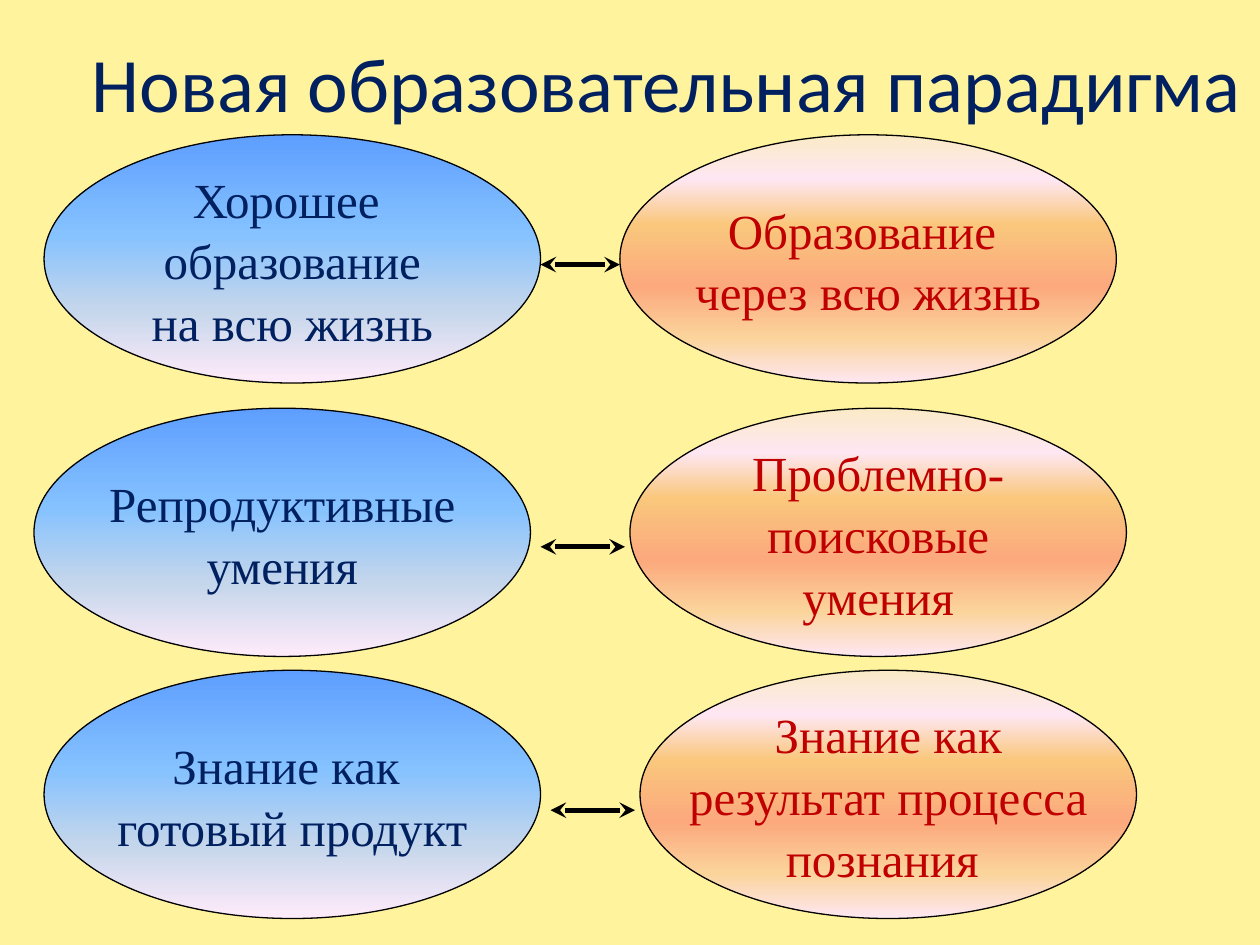
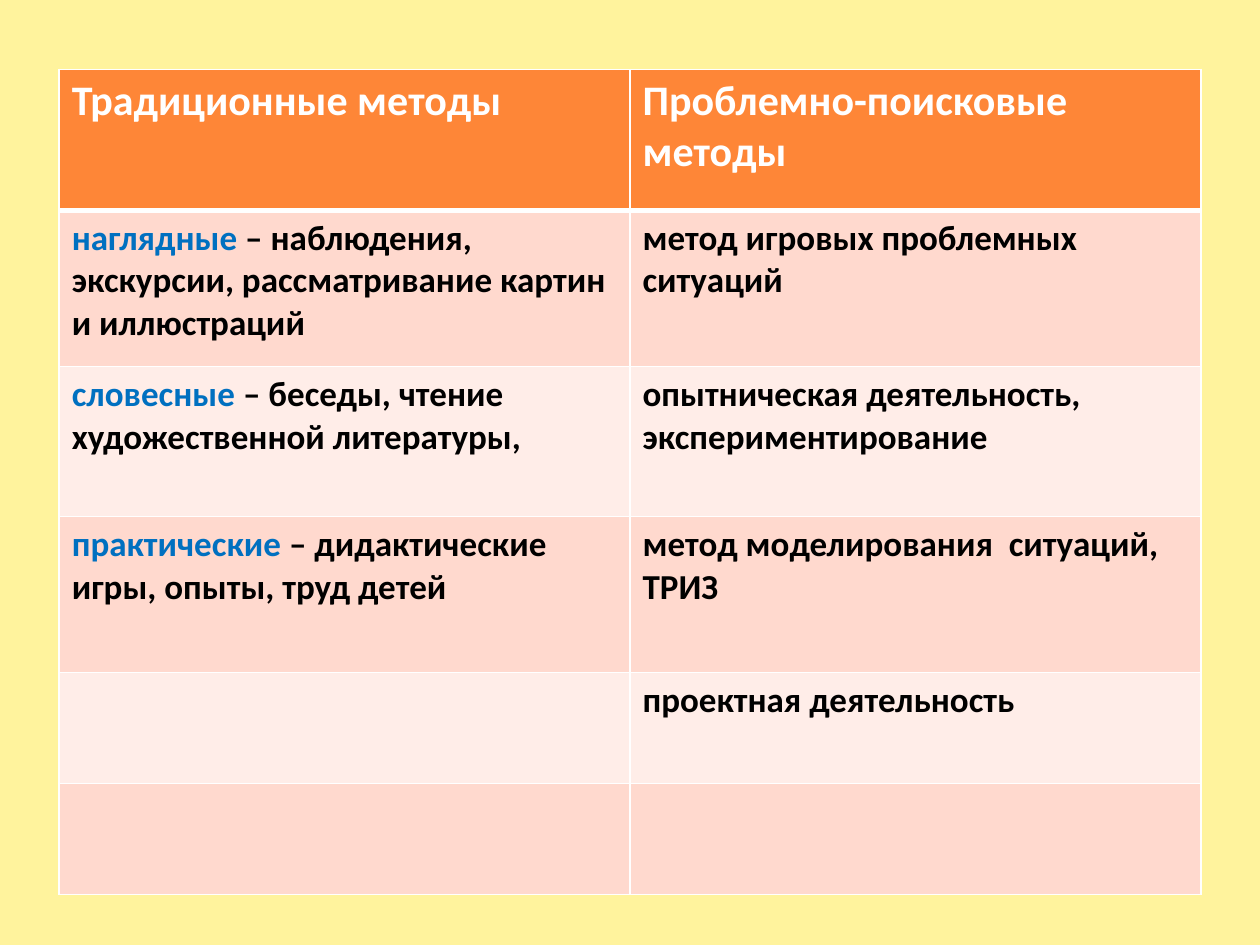
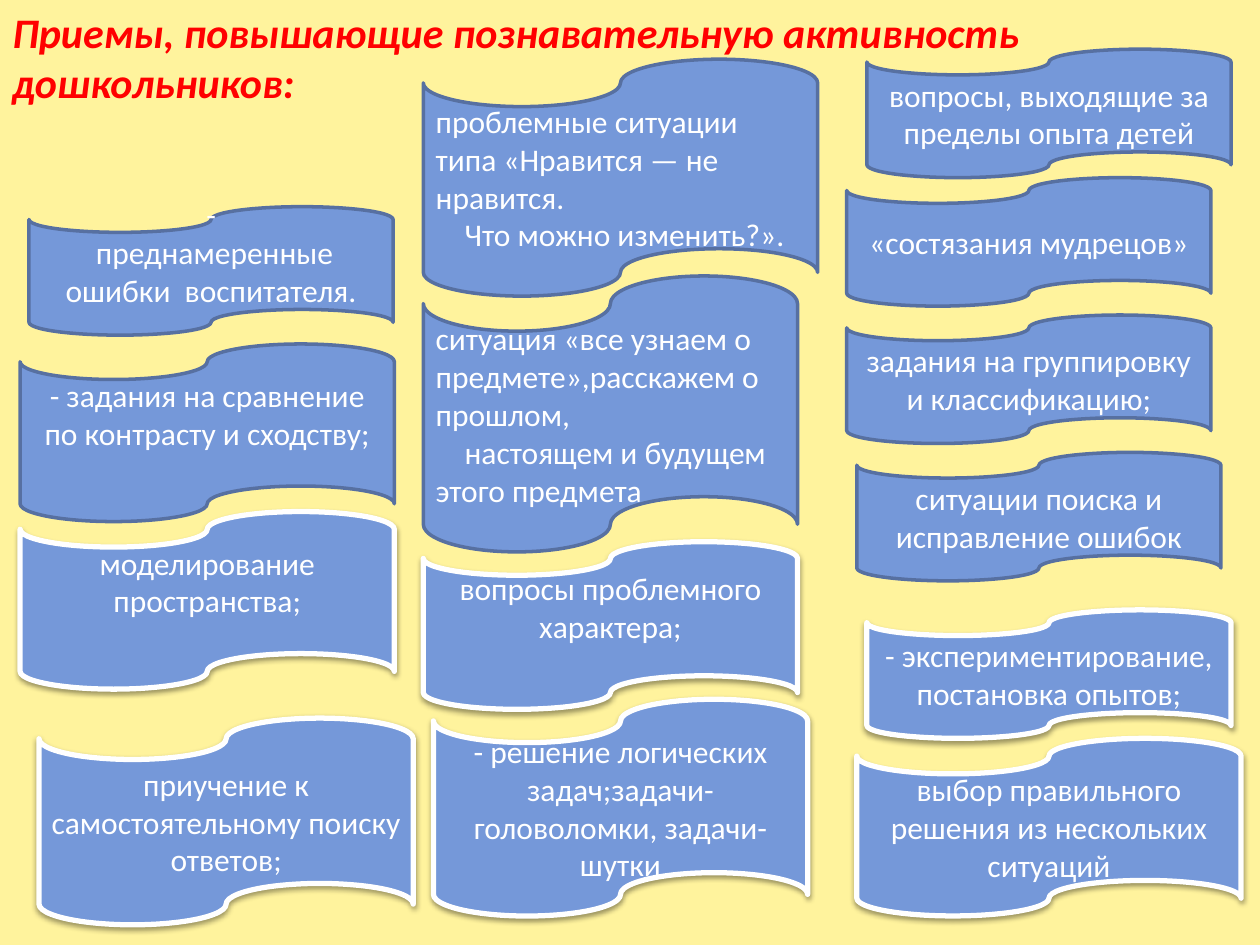
from dataclasses import dataclass

from lxml import etree
from pptx import Presentation
from pptx import util as u
from pptx.dml.color import RGBColor
from pptx.enum import shapes, text
from pptx.oxml.ns import qn

SAND, NAVY, CRIMSON, RED = "FFF39D", "002060", "C00000", "FF0000"
WHITE, BLACK, BLUE = "FFFFFF", "000000", "0070C0"
TAPE_FILL, TAPE_EDGE = "7598D9", "5770A1"
HEADER_FILL, BAND_FILLS = "FE8637", ("FFD9CE", "FFEDE8")
BLUE_STOPS = ((0, "5E9EFF"), (40, "85C2FF"), (70, "C4D6EB"), (100, "FFEBFA"))
ORANGE_STOPS = ((0, "FBEAC7"), (18, "FEE7F2"), (36, "FAC77D"),
                (61, "FBA97D"), (82, "FBD49C"), (100, "FEE7F2"))
SANS, SERIF = "Calibri", "Times New Roman"
LEFT, CENTER = text.PP_ALIGN.LEFT, text.PP_ALIGN.CENTER
OVAL_WIDTH, OVAL_HEIGHT = 3.94, 1.97


@dataclass
class Contrast:
    """A pair of opposed ideas and the arrow between them."""
    top: float
    old_left: float
    new_left: float
    arrow_start: float
    arrow_end: float
    arrow_y: float
    old: str
    new: str


@dataclass
class Tape:
    left: float
    top: float
    width: float
    height: float
    words: str
    raised: bool = False  # white edge with a shadow
    lift: float = 0  # extra space under the text
    align: text.PP_ALIGN = CENTER


@dataclass
class Method:
    kind: str = ""
    traditional: str = ""
    searching: str = ""


CONTRASTS = [
    Contrast(1.07, 0.35, 4.92, 4.29, 4.92, 2.1,
             "Хорошее \nобразование\nна всю жизнь", "Образование \nчерез всю жизнь"),
    Contrast(3.24, 0.27, 5, 4.29, 4.96, 4.34,
             "Репродуктивные\nумения", "Проблемно-\nпоисковые\nумения"),
    Contrast(5.32, 0.35, 5.08, 4.37, 5.04, 6.43,
             "Знание как \nготовый продукт", "Знание как\nрезультат процесса\nпознания "),
]

HEADINGS = ("Традиционные методы", "Проблемно-поисковые методы")
ROW_HEIGHTS = (1.12, 1.24, 1.19, 1.24, 0.88, 0.88)
METHODS = [
    Method("наглядные", " – наблюдения, экскурсии, рассматривание картин и иллюстраций",
           "метод игровых проблемных ситуаций"),
    Method("словесные", " – беседы, чтение художественной литературы,",
           "опытническая деятельность, экспериментирование"),
    Method("практические", " – дидактические игры, опыты, труд детей",
           "метод моделирования  ситуаций, ТРИЗ"),
    Method(searching="проектная деятельность"),
    Method(),
]

TAPES = [
    Tape(0.16, 2.73, 2.97, 1.41, "- задания на сравнение по контрасту и сходству;", lift=0.3),
    Tape(3.36, 0.47, 3.13, 1.88,
         "проблемные ситуации типа «Нравится — не нравится.\nЧто можно изменить?».", align=LEFT),
    Tape(3.36, 2.19, 2.97, 2.19,
         "ситуация «все узнаем о предмете»,расскажем о прошлом,\n"
         "настоящем и будущем этого предмета", align=LEFT),
    Tape(0.16, 4.06, 2.97, 1.41, "моделирование пространства;", True, 0.3),
    Tape(0.31, 5.7, 2.97, 1.64, "приучение к самостоятельному поиску ответов;", True),
    Tape(3.44, 5.55, 2.97, 1.72,
         "- решение логических задач;задачи-головоломки, задачи-шутки", True),
    Tape(6.72, 1.41, 2.89, 1.02, "«состязания мудрецов»"),
    Tape(6.72, 2.5, 2.89, 1.02, "задания на группировку и классификацию;"),
    Tape(6.8, 3.59, 2.89, 1.02, "ситуации поиска и исправление ошибок"),
    Tape(3.36, 4.3, 2.97, 1.33, "вопросы проблемного характера;", True, 0.3),
    Tape(6.88, 4.84, 2.89, 1.02, "- экспериментирование, постановка опытов;", True),
    Tape(6.8, 5.86, 3.05, 1.41, "выбор правильного решения из нескольких ситуаций", True),
    Tape(0.23, 1.64, 2.89, 1.02, "-\n преднамеренные ошибки  воспитателя.", lift=0.3),
    Tape(6.88, 0.39, 2.89, 1.02, "вопросы, выходящие за пределы опыта детей"),
]


def rgb(color: str) -> RGBColor:
    return RGBColor.from_string(color)


def write_text(frame, words: str, *, size: float, color: str, font: str = SANS,
               bold: bool = False, italic: bool = False, align=LEFT,
               lead: str = "", lead_color: str = BLUE, spacing: float = 1,
               later_indent: float = 0) -> None:
    """Write one paragraph per line; lead opens the first one in its own colour."""
    for index, line in enumerate(words.split("\n")):
        para = frame.add_paragraph() if index else frame.paragraphs[0]
        para.alignment = align
        para.line_spacing = spacing
        if index and later_indent:
            para._p.get_or_add_pPr().set("indent", str(u.Inches(later_indent)))
        spans = [(line, color)]
        if lead and not index:
            spans.insert(0, (lead, lead_color))
        for content, shade in spans:
            if not content:
                continue
            span = para.add_run()
            span.text = content
            span.font.name = font
            span.font.size = u.Pt(size)
            span.font.bold = bold
            span.font.italic = italic
            span.font.color.rgb = rgb(shade)


def add_page(deck):
    page = deck.slides.add_slide(deck.slide_layouts[6])
    page.background.fill.solid()
    page.background.fill.fore_color.rgb = rgb(SAND)
    return page


def add_title(page, left: float, top: float, width: float, height: float,
              words: str, *, anchor, wrap: bool, **style) -> None:
    box = page.shapes.add_textbox(*map(u.Inches, (left, top, width, height)))
    box.text_frame.word_wrap = wrap
    box.text_frame.vertical_anchor = anchor
    write_text(box.text_frame, words, **style)


def add_figure(page, kind, left: float, top: float, width: float, height: float,
               edge: str, weight: float):
    figure = page.shapes.add_shape(kind, *map(u.Inches, (left, top, width, height)))
    figure.shadow.inherit = False
    figure.line.color.rgb = rgb(edge)
    figure.line.width = u.Pt(weight)
    figure.text_frame.vertical_anchor = text.MSO_ANCHOR.MIDDLE
    return figure


def fill_gradient(figure, stops) -> None:
    """Fill from top to bottom with (percent, colour) stops."""
    figure.fill.gradient()
    figure.fill.gradient_angle = 270
    stop_list = next(figure.element.iter(qn("a:gsLst")))
    for stop in list(stop_list):
        stop_list.remove(stop)
    for percent, color in stops:
        stop = etree.SubElement(stop_list, qn("a:gs"), pos=str(percent * 1000))
        etree.SubElement(stop, qn("a:srgbClr"), val=color)


def add_oval(page, left: float, top: float, words: str, stops, color: str) -> None:
    oval = add_figure(page, shapes.MSO_SHAPE.OVAL, left, top,
                      OVAL_WIDTH, OVAL_HEIGHT, BLACK, 0.75)
    fill_gradient(oval, stops)
    oval.text_frame.word_wrap = False
    write_text(oval.text_frame, words, size=28, color=color, font=SERIF,
               align=CENTER, spacing=1.05)


def add_double_arrow(page, start: float, end: float, y: float) -> None:
    arrow = page.shapes.add_connector(shapes.MSO_CONNECTOR.STRAIGHT,
                                      *map(u.Inches, (start, y, end, y)))
    arrow.line.color.rgb = rgb(BLACK)
    arrow.line.width = u.Pt(3)
    for tip in ("a:headEnd", "a:tailEnd"):
        etree.SubElement(arrow.line._get_or_add_ln(), qn(tip), type="stealth")
    etree.SubElement(arrow.element.spPr, qn("a:effectLst"))


def add_soft_shadow(figure) -> None:
    effects = figure.element.spPr.find(qn("a:effectLst"))
    shadow = etree.SubElement(effects, qn("a:outerShdw"), blurRad=str(u.Pt(3.1)),
                              dist=str(u.Pt(1.6)), dir="5400000", rotWithShape="0")
    color = etree.SubElement(shadow, qn("a:srgbClr"), val=BLACK)
    etree.SubElement(color, qn("a:alpha"), val="38000")


def add_tape(page, tape: Tape) -> None:
    edge, weight = (WHITE, 3) if tape.raised else (TAPE_EDGE, 2)
    figure = add_figure(page, shapes.MSO_SHAPE.FLOWCHART_PUNCHED_TAPE, tape.left, tape.top,
                        tape.width, tape.height, edge, weight)
    figure.fill.solid()
    figure.fill.fore_color.rgb = rgb(TAPE_FILL)
    if tape.raised:
        add_soft_shadow(figure)
    frame = figure.text_frame
    frame.word_wrap = True
    frame.margin_bottom = u.Inches(0.05 + tape.lift)
    write_text(frame, tape.words, size=18, color=WHITE, align=tape.align,
               later_indent=0.23 if tape.align == LEFT else 0)


def style_cell(cell, fill: str, top: float = 1, bottom: float = 1) -> None:
    """Set the fill and the white borders, with top and bottom widths in points."""
    properties = cell._tc.get_or_add_tcPr()
    for side, weight in (("L", 1), ("R", 1), ("T", top), ("B", bottom)):
        border = etree.SubElement(properties, qn(f"a:ln{side}"), w=str(u.Pt(weight)))
        paint = etree.SubElement(border, qn("a:solidFill"))
        etree.SubElement(paint, qn("a:srgbClr"), val=WHITE)
    cell.fill.solid()
    cell.fill.fore_color.rgb = rgb(fill)


def build_paradigm(deck) -> None:
    page = add_page(deck)
    add_title(page, 0.63, 0.21, 9.37, 0.87, "Новая образовательная парадигма",
              anchor=text.MSO_ANCHOR.MIDDLE, wrap=True, size=44, color=NAVY)
    for pair in CONTRASTS:
        add_double_arrow(page, pair.arrow_start, pair.arrow_end, pair.arrow_y)
        add_oval(page, pair.old_left, pair.top, pair.old, BLUE_STOPS, NAVY)
        add_oval(page, pair.new_left, pair.top, pair.new, ORANGE_STOPS, CRIMSON)


def build_methods(deck) -> None:
    page = add_page(deck)
    frame = page.shapes.add_table(len(ROW_HEIGHTS), len(HEADINGS),
                                  *map(u.Inches, (0.47, 0.55, 9.06, sum(ROW_HEIGHTS))))
    table = frame.table
    table.first_row = table.horz_banding = False
    for row, height in zip(table.rows, ROW_HEIGHTS):
        row.height = u.Inches(height)
    for column, heading in enumerate(HEADINGS):
        cell = table.cell(0, column)
        style_cell(cell, HEADER_FILL, bottom=3)
        write_text(cell.text_frame, heading, size=24, color=WHITE, bold=True)
    for row, method in enumerate(METHODS, start=1):
        entries = ((method.kind, method.traditional), ("", method.searching))
        for column, (lead, words) in enumerate(entries):
            cell = table.cell(row, column)
            style_cell(cell, BAND_FILLS[(row - 1) % 2], top=3 if row == 1 else 1)
            write_text(cell.text_frame, words, size=20, color=BLACK, bold=True, lead=lead)


def build_techniques(deck) -> None:
    page = add_page(deck)
    add_title(page, 0, 0, 8.34, 1.21,
              "Приемы, повышающие познавательную активность\nдошкольников:",
              anchor=text.MSO_ANCHOR.TOP, wrap=False, size=24, color=RED,
              bold=True, italic=True)
    for tape in TAPES:
        add_tape(page, tape)


def main() -> None:
    deck = Presentation()
    deck.slide_width, deck.slide_height = u.Inches(10), u.Inches(7.5)
    build_paradigm(deck)
    build_methods(deck)
    build_techniques(deck)
    deck.save("out.pptx")


if __name__ == "__main__":
    main()
